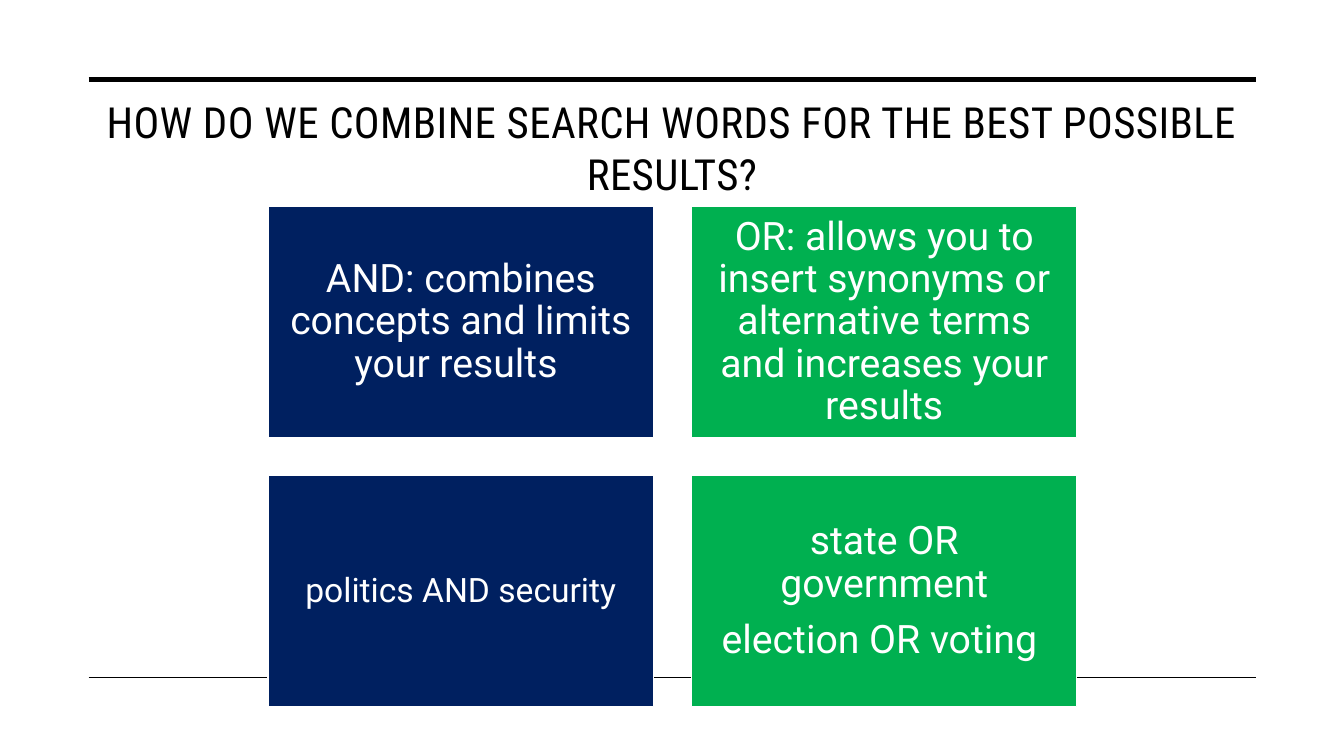
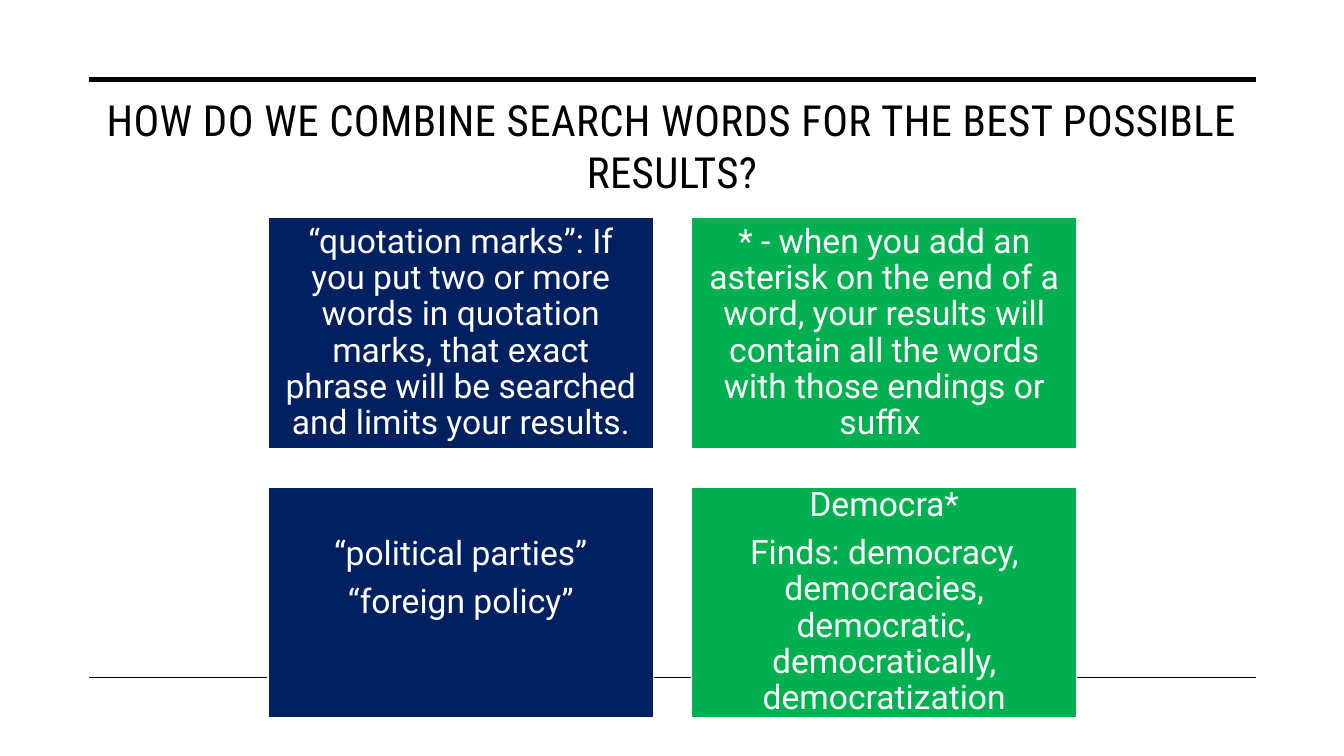
from dataclasses import dataclass
from lxml.etree import SubElement
from pptx import Presentation
from pptx.dml.color import RGBColor
from pptx.enum.shapes import MSO_CONNECTOR, MSO_SHAPE
from pptx.enum.text import MSO_ANCHOR, PP_ALIGN
from pptx.oxml.ns import qn
from pptx.util import Pt

SCALE = 9144  # EMU per px, 100 px to the inch


def px(n):
    return n * SCALE


@dataclass(frozen=True)
class Theme:
    ink: RGBColor = RGBColor(0, 0, 0)
    paper: RGBColor = RGBColor(255, 255, 255)
    navy: RGBColor = RGBColor(0x00, 0x20, 0x60)
    green: RGBColor = RGBColor(0x00, 0xB0, 0x50)
    head: str = "Roboto Condensed"
    body: str = "Roboto"
    title: float = 30.6
    large: int = 28
    small: int = 24


class Deck:
    def __init__(self, theme):
        self.theme = theme
        self.show = Presentation()
        self.show.slide_width, self.show.slide_height = px(1333), px(750)
        self.slide = None

    def page(self):
        self.slide = self.show.slides.add_slide(self.show.slide_layouts[6])
        self.rule(79, 3.5)
        self.rule(672, 1)

    def rule(self, y, weight):
        line = self.slide.shapes.add_connector(
            MSO_CONNECTOR.STRAIGHT, px(88), px(y), px(1246), px(y))
        line.line.color.rgb = self.theme.ink
        line.line.width = Pt(weight)
        SubElement(line._element.spPr, qn("a:effectLst"))

    def label(self, para, text, font, size, color):
        para.alignment = PP_ALIGN.CENTER
        run = para.add_run()
        run.text = text
        run.font.name, run.font.size = font, Pt(size)
        run.font.color.rgb = color
        return run

    def title(self, text, y):
        box = self.slide.shapes.add_textbox(px(92), px(y), px(1149), px(118))
        frame = box.text_frame
        frame.word_wrap = True
        frame.vertical_anchor = MSO_ANCHOR.MIDDLE
        run = self.label(frame.paragraphs[0], text, self.theme.head,
                         self.theme.title, self.theme.ink)
        run.font._element.set("spc", "30")

    def card(self, x, y, wide, high, fill, size, lines, lift=0):
        box = self.slide.shapes.add_shape(
            MSO_SHAPE.RECTANGLE, px(x), px(y), px(wide), px(high))
        box.shadow.inherit = False
        box.fill.solid()
        box.fill.fore_color.rgb = fill
        box.line.color.rgb = self.theme.paper
        box.line.width = Pt(1)
        frame = box.text_frame
        frame.word_wrap = True
        frame.vertical_anchor = MSO_ANCHOR.MIDDLE
        inset = round(size * 0.42)
        frame.margin_left = frame.margin_right = frame.margin_top = px(inset)
        frame.margin_bottom = px(inset + lift)
        for i, text in enumerate(lines):
            para = frame.paragraphs[0] if i == 0 else frame.add_paragraph()
            para.line_spacing = 0.9
            para.space_after = Pt(size * 0.35)
            self.label(para, text, self.theme.body, size, self.theme.paper)

    def grid(self, top, cards):
        """Two columns of cards, filled row by row."""
        left, wide, high, gap = 266, 382, 229, 38
        fills = self.theme.navy, self.theme.green
        for i, (size, lines, *lift) in enumerate(cards):
            row, col = divmod(i, 2)
            self.card(left + col * (wide + gap), top + row * (high + gap),
                      wide, high, fills[col], size, lines, *lift)


def main():
    theme = Theme()
    deck = Deck(theme)
    large, small = theme.large, theme.small
    head = "HOW DO WE COMBINE SEARCH WORDS FOR THE BEST POSSIBLE RESULTS?"

    # Title top, grid top, then cards: size, paragraphs, optional text lift
    pages = [
        (87, 205, [
            (large, ["AND: combines concepts and limits your results "]),
            (large, ["OR: allows you to insert synonyms or alternative "
                     "terms and increases your results"]),
            (small, ["politics AND security"]),
            (large, ["state OR government", "election OR voting "]),
        ]),
        (85, 216, [
            (small, ["“quotation marks”: If you put two or more words in "
                     "quotation marks, that exact phrase will be searched "
                     "and limits your results."]),
            (small, ["* - when you add an asterisk on the end of a word, "
                     "your results will contain all the words with those "
                     "endings or suffix "]),
            (small, ["“political parties”", "“foreign policy”"], 47),
            (small, ["Democra*",
                     "Finds: democracy, democracies, democratic, "
                     "democratically, democratization"]),
        ]),
    ]
    for y, top, cards in pages:
        deck.page()
        deck.title(head, y)
        deck.grid(top, cards)
    deck.show.save("out.pptx")


if __name__ == "__main__":
    main()
